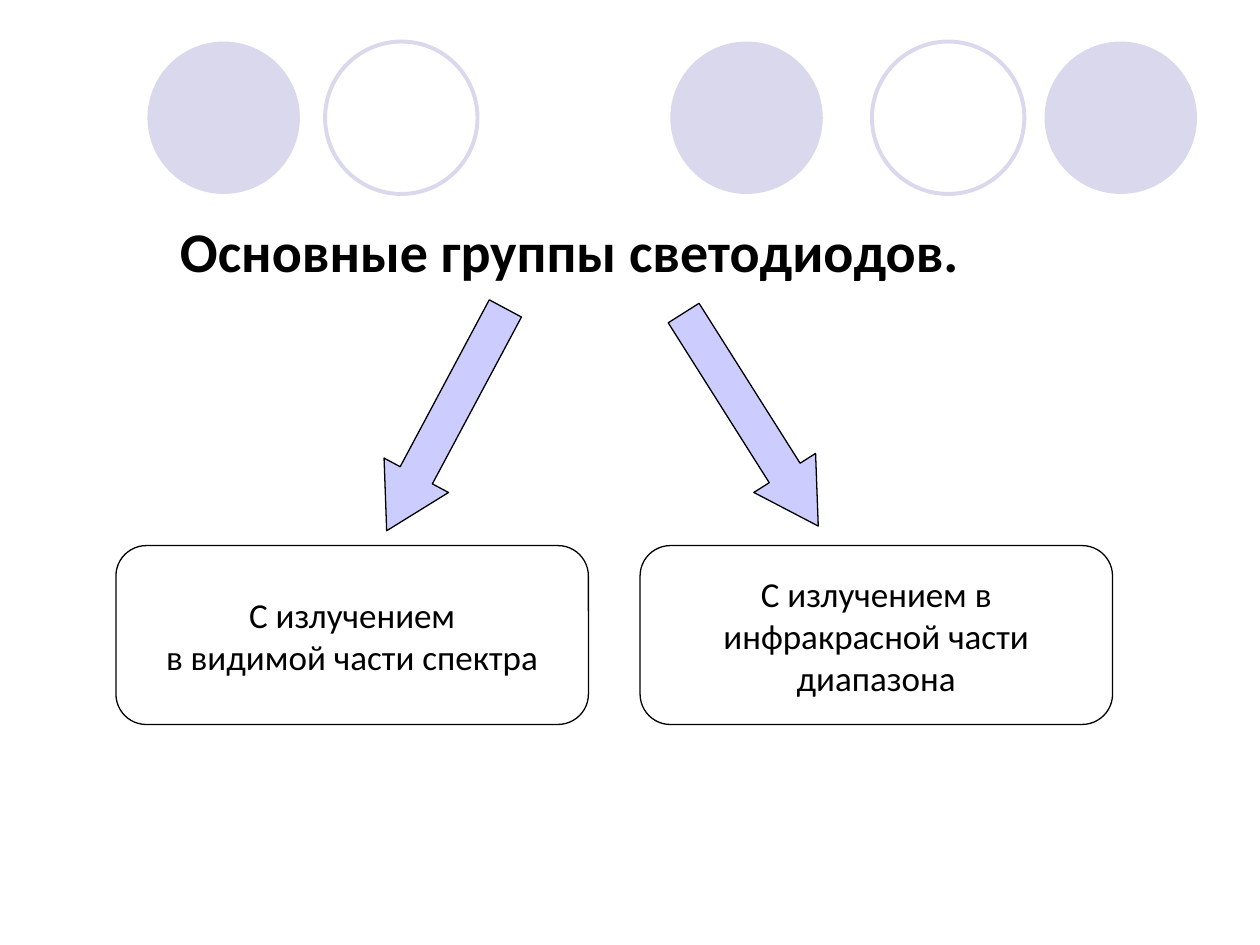
from pptx import Presentation
from pptx.dml.color import RGBColor
from pptx.enum.shapes import MSO_SHAPE
from pptx.enum.text import MSO_ANCHOR, PP_ALIGN
from pptx.util import Inches, Pt

OVAL = MSO_SHAPE.OVAL
ARROW = MSO_SHAPE.DOWN_ARROW
ROUND = MSO_SHAPE.ROUNDED_RECTANGLE
MIDDLE = MSO_ANCHOR.MIDDLE
LEFT, CENTER = PP_ALIGN.LEFT, PP_ALIGN.CENTER

PALE, LILAC, BLACK, WHITE = "D9D8EC", "CCCCFF", "000000", "FFFFFF"


def paint(color, value):
    color.rgb = RGBColor.from_string(value)


class Deck:
    font = "Calibri"

    def __init__(self, wide, high):
        self.prs = Presentation()
        self.prs.slide_width = Inches(wide)
        self.prs.slide_height = Inches(high)
        self.slide = self.prs.slides.add_slide(self.prs.slide_layouts[6])

    def shape(self, kind, box, fill=None, line=None, width=0.75, adj=()):
        item = self.slide.shapes.add_shape(kind, *map(Inches, box))
        item.shadow.inherit = False
        for i, value in enumerate(adj):
            item.adjustments[i] = value
        if fill:
            item.fill.solid()
            paint(item.fill.fore_color, fill)
        else:
            item.fill.background()
        if line:
            paint(item.line.color, line)
            item.line.width = Pt(width)
        else:
            item.line.fill.background()
        return item

    def label(self, frame, lines, size, align, bold=False):
        frame.word_wrap = True
        for i, line in enumerate(lines):
            para = frame.add_paragraph() if i else frame.paragraphs[0]
            para.alignment = align
            run = para.add_run()
            run.text = line
            run.font.name = self.font
            run.font.size = Pt(size)
            run.font.bold = bold
            paint(run.font.color, BLACK)

    def title(self, text, box):
        item = self.slide.shapes.add_textbox(*map(Inches, box))
        self.label(item.text_frame, [text], 32, LEFT, bold=True)

    def disc(self, left, top):
        self.shape(OVAL, (left, top, 1.21, 1.21), fill=PALE)

    def ring(self, left, top):
        self.shape(OVAL, (left, top, 1.21, 1.21), line=PALE, width=2.25)

    def arrow(self, left, turn):
        item = self.shape(ARROW, (left, 2.33, 0.58, 2), LILAC, BLACK,
                          adj=(0.5, 0.86))
        item.rotation = turn

    def card(self, left, lines):
        item = self.shape(ROUND, (left, 4.33, 3.75, 1.42), WHITE, BLACK,
                          adj=(0.17,))
        item.text_frame.vertical_anchor = MIDDLE
        self.label(item.text_frame, lines, 20, CENTER)


def main():
    deck = Deck(10, 7.5)

    # Row of circles
    for left in (1.17, 5.32, 8.29):
        deck.disc(left, 0.33)
    for left in (2.58, 6.92):
        deck.ring(left, 0.33)

    # Heading
    deck.title("Основные группы светодиодов.", (1.33, 1.67, 7.35, 0.63))

    # Arrows to the two groups
    deck.arrow(3.25, 28.1)
    deck.arrow(5.67, 327.7)

    # Groups
    deck.card(0.92, ["С излучением", "в видимой части спектра"])
    deck.card(5.08, ["С излучением в", "инфракрасной части", "диапазона"])

    deck.prs.save("out.pptx")


if __name__ == "__main__":
    main()
